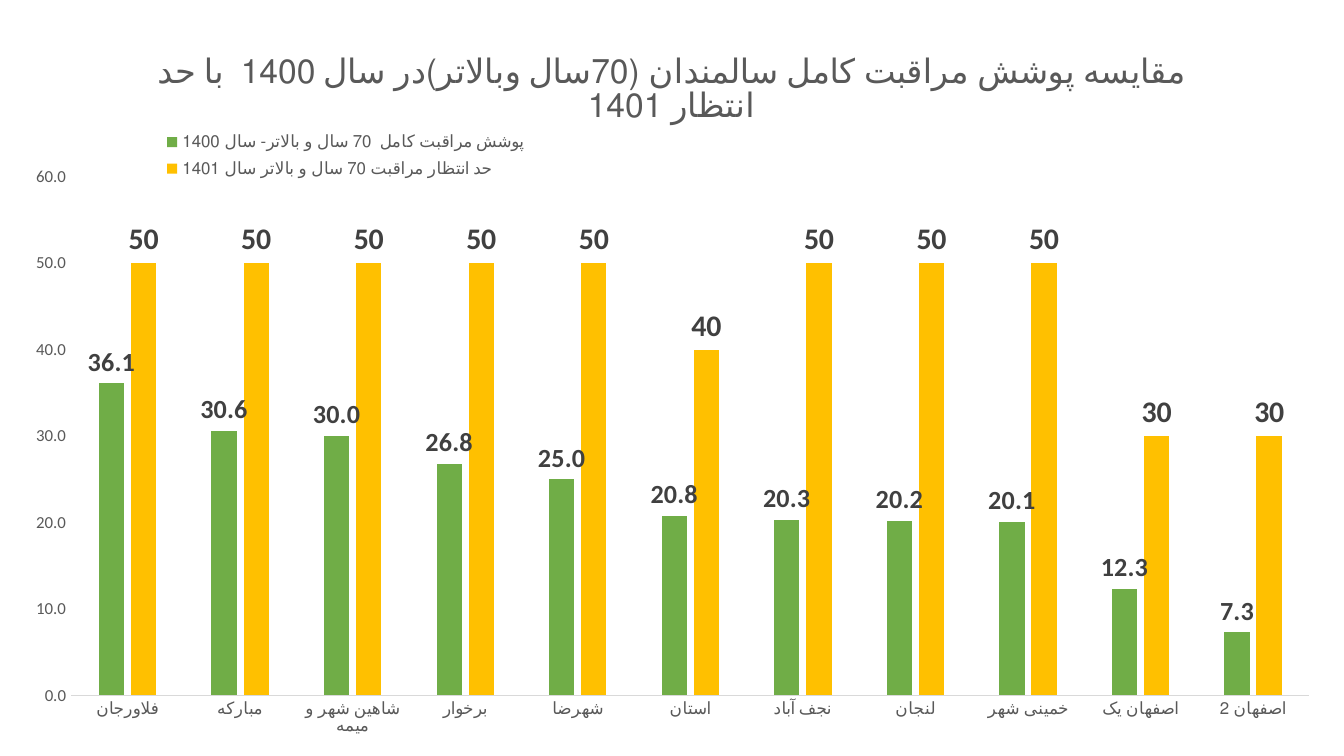
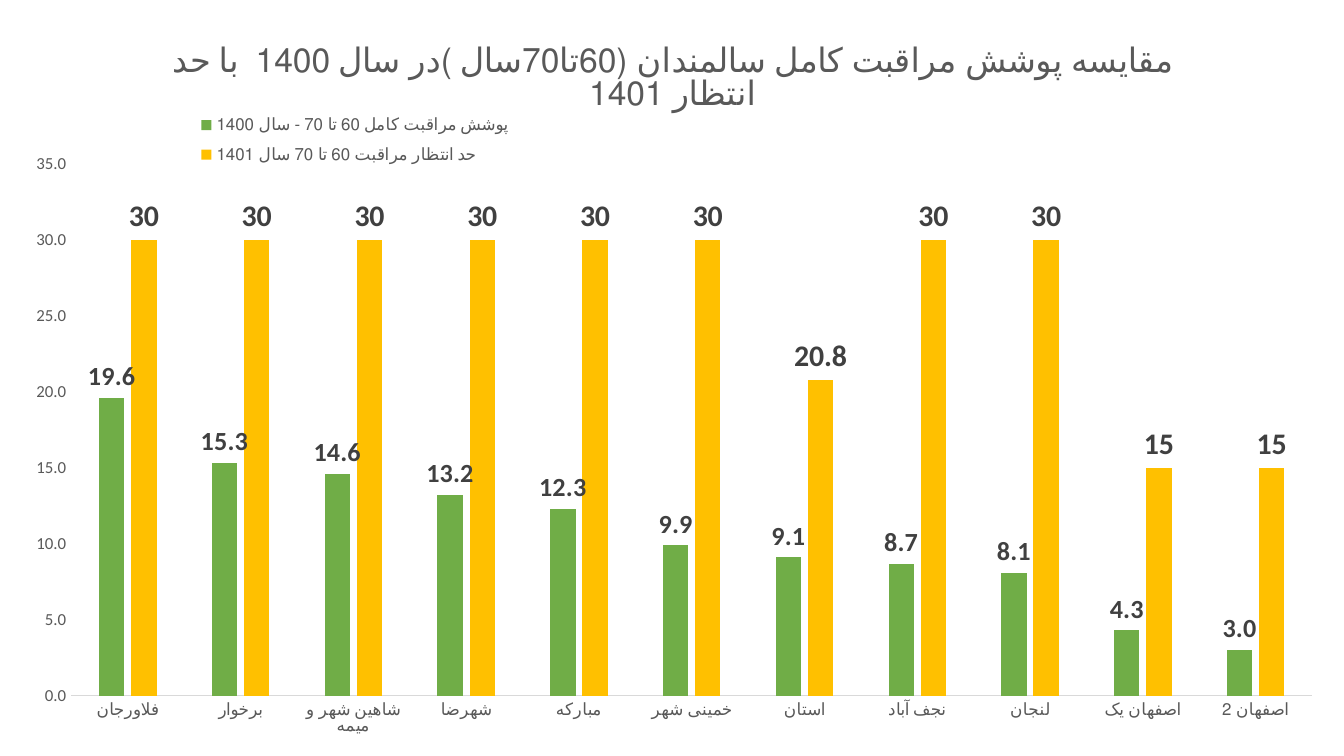
from dataclasses import dataclass

from lxml.etree import SubElement
from pptx import Presentation
from pptx.chart.data import CategoryChartData
from pptx.dml.color import RGBColor
from pptx.enum.chart import (
    XL_CHART_TYPE as ChartType,
    XL_LABEL_POSITION as LabelPosition,
    XL_LEGEND_POSITION as LegendPosition,
    XL_TICK_MARK as TickMark,
)
from pptx.oxml.ns import qn
from pptx.util import Inches, Pt

SLIDES = [
    {
        "title": "مقایسه پوشش مراقبت کامل سالمندان (70سال وبالاتر)در سال 1400  با حد انتظار 1401",
        "categories": ["فلاورجان", "مبارکه", "شاهین شهر و میمه", "برخوار", "شهرضا", "استان",
                       "نجف آباد", "لنجان", "خمینی شهر", "اصفهان یک", "اصفهان 2"],
        "coverage": ("پوشش مراقبت کامل  70 سال و بالاتر- سال 1400",
                     [36.1, 30.6, 30, 26.8, 25, 20.8, 20.3, 20.2, 20.1, 12.3, 7.3]),
        "target": ("حد انتظار مراقبت 70 سال و بالاتر سال 1401",
                   [50, 50, 50, 50, 50, 40, 50, 50, 50, 30, 30]),
        "scale": (60, 10),
        "frame": (0.1, 0.19, 9.79, 5.31),
        "plot": (4.4, 21.2, 94.1, 72.7),
        "legend": (11, 13.8, 28.5, 8.8),
    },
    {
        "title": "مقایسه پوشش مراقبت کامل سالمندان (60تا70سال )در سال 1400  با حد انتظار 1401",
        "categories": ["فلاورجان", "برخوار", "شاهین شهر و میمه", "شهرضا", "مبارکه", "خمینی شهر",
                       "استان", "نجف آباد", "لنجان", "اصفهان یک", "اصفهان 2"],
        "coverage": ("پوشش مراقبت کامل 60 تا 70 - سال 1400",
                     [19.6, 15.3, 14.6, 13.2, 12.3, 9.9, 9.1, 8.7, 8.1, 4.3, 3]),
        "target": ("حد انتظار مراقبت 60 تا 70 سال 1401",
                   [30, 30, 30, 30, 30, 30, 20.8, 30, 30, 15, 15]),
        "scale": (35, 5),
        "frame": (0.1, 0.1, 9.81, 5.52),
        "plot": (4.4, 20.3, 94.1, 71.7),
        "legend": (13.4, 12.2, 25, 9.7),
    },
]


@dataclass(frozen=True)
class Theme:
    """Typeface, colours and type sizes shared by the slides."""
    font: str = "Calibri"
    base: str = "000000"
    muted: str = "595959"
    label: str = "404040"
    axis: str = "D9D9D9"
    coverage: str = "70AD47"
    target: str = "FFC000"
    base_size: int = 10
    title_size: int = 18
    small_size: int = 9
    coverage_size: int = 14
    target_size: int = 16


THEME = Theme()
SERIES_STYLES = [
    (THEME.coverage, THEME.coverage_size, "0.0"),
    (THEME.target, THEME.target_size, "General"),
]


def style_font(font, size, color, bold=False):
    """Apply the theme typeface with a size, colour and weight."""
    font.name, font.size, font.bold = THEME.font, Pt(size), bold
    font.color.rgb = RGBColor.from_string(color)


def place(element, index, percents, inner=False):
    """Give a chart part a manual layout in percent of the chart."""
    for old in element.findall(qn("c:layout")):
        element.remove(old)
    layout = SubElement(element, qn("c:layout"))
    element.insert(index, layout)
    manual = SubElement(layout, qn("c:manualLayout"))
    settings = [("layoutTarget", "inner")] if inner else []
    settings += [("xMode", "edge"), ("yMode", "edge")]
    settings += [(name, str(percent / 100)) for name, percent in zip("xywh", percents)]
    for name, value in settings:
        SubElement(manual, qn(f"c:{name}")).set("val", value)


def style_axes(chart, maximum, step):
    """Format the category and value axes."""
    for axis in (chart.category_axis, chart.value_axis):
        axis.major_tick_mark = axis.minor_tick_mark = TickMark.NONE
        axis.has_major_gridlines = False
        style_font(axis.tick_labels.font, THEME.small_size, THEME.muted)
    line = chart.category_axis.format.line
    line.color.rgb, line.width = RGBColor.from_string(THEME.axis), Pt(0.75)
    values = chart.value_axis
    values.format.line.fill.background()
    values.minimum_scale, values.maximum_scale, values.major_unit = 0, maximum, step
    values.tick_labels.number_format = "0.0"
    values.tick_labels.number_format_is_linked = False


def style_series(plot):
    """Colour the columns and show their values."""
    plot.gap_width, plot.overlap, plot.vary_by_categories = 219, -27, False
    for series, (color, size, number_format) in zip(plot.series, SERIES_STYLES):
        series.format.fill.solid()
        series.format.fill.fore_color.rgb = RGBColor.from_string(color)
        labels = series.data_labels
        labels.show_value = True
        labels.position = LabelPosition.OUTSIDE_END
        labels.number_format = number_format
        labels.number_format_is_linked = False
        style_font(labels.font, size, THEME.label, bold=True)


def add_comparison(slide, content):
    """Add the coverage and target column chart."""
    data = CategoryChartData()
    data.categories = content["categories"]
    for key in ("coverage", "target"):
        data.add_series(*content[key])
    frame = map(Inches, content["frame"])
    chart = slide.shapes.add_chart(ChartType.COLUMN_CLUSTERED, *frame, data).chart
    style_font(chart.font, THEME.base_size, THEME.base)

    chart.has_title = True
    paragraph = chart.chart_title.text_frame.paragraphs[0]
    paragraph.text = content["title"]
    style_font(paragraph.runs[0].font, THEME.title_size, THEME.muted)
    chart.chart_title.include_in_layout = False

    style_axes(chart, *content["scale"])
    style_series(chart.plots[0])

    chart.has_legend = True
    chart.legend.position = LegendPosition.BOTTOM
    chart.legend.include_in_layout = False
    style_font(chart.legend.font, THEME.small_size, THEME.muted)

    chart_element = chart.element.find(qn("c:chart"))
    place(chart_element.find(qn("c:plotArea")), 0, content["plot"], inner=True)
    legend = chart_element.find(qn("c:legend"))
    legend_index = 0 if legend.find(qn("c:legendPos")) is None else 1
    place(legend, legend_index, content["legend"])


def main():
    """Build and save the presentation."""
    presentation = Presentation()
    presentation.slide_width = Inches(10)
    presentation.slide_height = presentation.slide_width * 9 // 16
    blank = presentation.slide_layouts[6]
    for content in SLIDES:
        add_comparison(presentation.slides.add_slide(blank), content)
    presentation.save("out.pptx")


if __name__ == "__main__":
    main()
